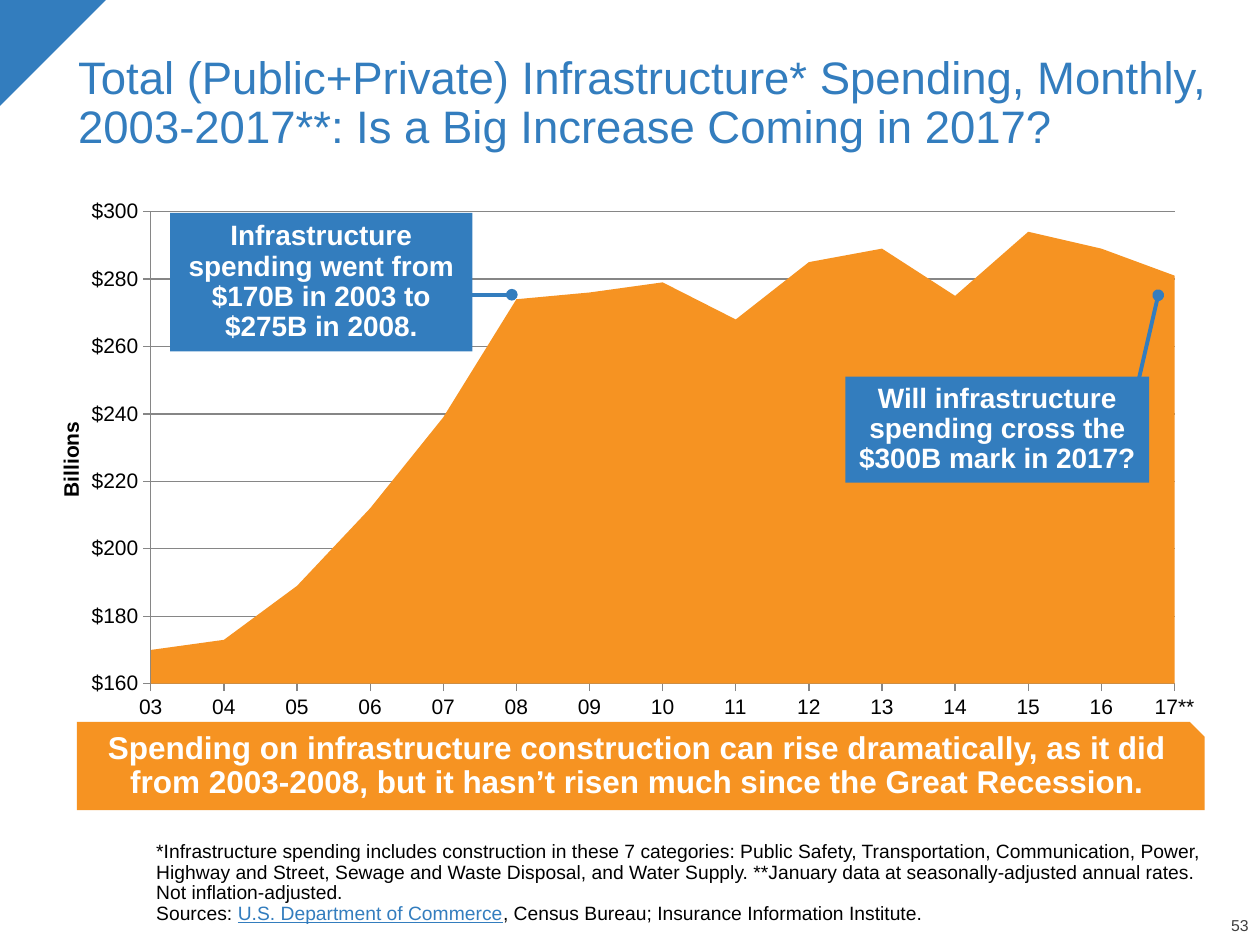
from collections import namedtuple

from lxml import etree
from pptx import Presentation
from pptx import util as u
from pptx.chart.data import CategoryChartData
from pptx.dml.color import RGBColor
from pptx.enum import chart as ch, shapes, text
from pptx.oxml import ns

COLORS = {"blue": "337DBE", "orange": "F69322", "white": "FFFFFF",
          "black": "000000", "gray": "404040", "grid": "868686"}
FONT = "Arial"
CELL = u.Inches(0.1)  # the slide is a grid of 100 columns by 75 rows
COLUMNS, ROWS = 100, 75
YEARS = [f"{year:02}" for year in range(3, 17)] + ["17**"]
SPENDING = [170, 173, 189, 212, 239, 274, 276, 279, 268, 285, 289, 275, 294, 289, 281]


class Box(namedtuple("Box", "left top width height")):
    """An area in grid cells."""

    def emu(self):
        return [round(cells * CELL) for cells in self]

    def point(self, across, down):
        """Position at the given shares of the box."""
        return (round((self.left + across * self.width) * CELL),
                round((self.top + down * self.height) * CELL))


def rgb(name):
    return RGBColor.from_string(COLORS[name])


def style_font(font, size, color="black", bold=False, underline=False):
    font.name, font.size = FONT, u.Pt(size)
    font.bold, font.underline = bold, underline
    font.color.rgb = rgb(color)


def write(frame, lines, size, color="black", bold=False, align=text.PP_ALIGN.LEFT,
          anchor=text.MSO_ANCHOR.MIDDLE, insets=(0.1, 0.05, 0.1, 0.05)):
    """Fill a frame; each line is a list of (words, extra font format)."""
    frame.word_wrap = True
    frame.auto_size = text.MSO_AUTO_SIZE.NONE
    frame.vertical_anchor = anchor
    (frame.margin_left, frame.margin_top,
     frame.margin_right, frame.margin_bottom) = map(u.Inches, insets)
    para = frame.paragraphs[0]
    para.alignment, para.line_spacing, para.space_before = align, 0.9, u.Pt(0)
    for index, line in enumerate(lines):
        if index:
            para.add_line_break()
        for words, extra in line:
            span = para.add_run()
            span.text = words
            style_font(span.font, size, **{"color": color, "bold": bold, **extra})


def add_block(parent, kind, box, color):
    block = parent.shapes.add_shape(kind, *box.emu())
    block.shadow.inherit = False
    block.fill.solid()
    block.fill.fore_color.rgb = rgb(color)
    block.line.fill.background()
    return block


def add_corner(page, box):
    corner = add_block(page, shapes.MSO_SHAPE.RIGHT_TRIANGLE, box, "blue")
    corner.rotation = 90


def add_title(page, box, words):
    title = page.shapes.title
    title.left, title.top, title.width, title.height = box.emu()
    write(title.text_frame, [[(words, {})]], 26, "blue", anchor=text.MSO_ANCHOR.BOTTOM)


def add_text(page, box, lines, size, **style):
    area = page.shapes.add_textbox(*box.emu())
    write(area.text_frame, lines, size, anchor=text.MSO_ANCHOR.BOTTOM,
          insets=(0, 0, 0, 0), **style)


def fix_plot_area(chart, **shares):
    """Pin the inner plot area to shares of the chart."""
    plot_area = chart.plots[0]._element.getparent()
    for old in plot_area.findall(ns.qn("c:layout")):
        plot_area.remove(old)
    layout = etree.Element(ns.qn("c:layout"))
    plot_area.insert(0, layout)
    manual = etree.SubElement(layout, ns.qn("c:manualLayout"))
    settings = {"layoutTarget": "inner", "xMode": "edge", "yMode": "edge", **shares}
    for tag, value in settings.items():
        etree.SubElement(manual, ns.qn(f"c:{tag}")).set("val", str(value))


def add_spending_chart(page, box):
    data = CategoryChartData()
    data.categories = YEARS
    data.add_series("Series 1", SPENDING)
    chart = page.shapes.add_chart(ch.XL_CHART_TYPE.AREA_STACKED, *box.emu(), data).chart
    chart.has_legend = chart.has_title = False
    style_font(chart.font, 18)
    fix_plot_area(chart, x=0.084, y=0.042, w=0.89, h=0.831)

    plot = chart.plots[0]
    plot.vary_by_categories = False
    fill = plot.series[0].format.fill
    fill.solid()
    fill.fore_color.rgb = rgb("orange")

    values, years = chart.value_axis, chart.category_axis
    for axis in (values, years):
        axis.major_tick_mark = ch.XL_TICK_MARK.OUTSIDE
        axis.minor_tick_mark = ch.XL_TICK_MARK.NONE
        axis.format.line.color.rgb = rgb("grid")
        style_font(axis.tick_labels.font, 12)
    years.has_major_gridlines = False
    values.minimum_scale, values.maximum_scale, values.major_unit = 160, 300, 20
    values.has_major_gridlines = True
    values.major_gridlines.format.line.color.rgb = rgb("grid")
    values.tick_labels.number_format = r"\$#,##0"
    values.tick_labels.number_format_is_linked = False
    # The area starts on the value axis itself
    values._element.find(ns.qn("c:crossBetween")).set("val", "midCat")

    frame = values.axis_title.text_frame
    frame.text = "Billions"
    style_font(frame.paragraphs[0].runs[0].font, 12, bold=True)
    frame._txBody.bodyPr.set("rot", "-5400000")
    frame._txBody.bodyPr.set("vert", "horz")


def add_callout(page, box, words, start, end):
    """Label with a dot-ended pointer; start and end are shares of the box."""
    group = page.shapes.add_group_shape()
    label = add_block(group, shapes.MSO_SHAPE.RECTANGLE, box, "blue")
    write(label.text_frame, [[(words, {})]], 16, "white", bold=True,
          align=text.PP_ALIGN.CENTER)
    pointer = group.shapes.add_connector(
        shapes.MSO_CONNECTOR.STRAIGHT, *box.point(*start), *box.point(*end))
    pointer.line.color.rgb = rgb("blue")
    pointer.line.width = u.Pt(2.25)
    etree.SubElement(pointer.line._get_or_add_ln(), ns.qn("a:tailEnd")).set("type", "oval")
    etree.SubElement(pointer._element.spPr, ns.qn("a:effectLst"))


def add_banner(page, box, words):
    banner = add_block(page, shapes.MSO_SHAPE.SNIP_1_RECTANGLE, box, "orange")
    write(banner.text_frame, [[(words, {})]], 18, "white", bold=True,
          align=text.PP_ALIGN.CENTER, insets=(0.1, 0.05, 0.1, 0.1))


def main():
    deck = Presentation()
    deck.slide_width, deck.slide_height = COLUMNS * CELL, ROWS * CELL
    page = deck.slides.add_slide(deck.slide_layouts[5])

    # Frame of the slide
    add_corner(page, Box(0, 0, 8.4, 8.4))
    add_text(page, Box(94.3, 72.9, 4.8, 1.3), [[("53", {})]], 9,
             color="gray", align=text.PP_ALIGN.RIGHT)
    add_title(page, Box(5.2, 2.3, 92.6, 10.4),
              "Total (Public+Private) Infrastructure* Spending, Monthly, "
              "2003-2017**: Is a Big Increase Coming in 2017?")

    # Footnote and sources
    add_text(page, Box(12.4, 67.1, 84, 6.3), [
        [("*Infrastructure spending includes construction in these 7 categories: "
          "Public Safety, Transportation, Communication, Power, Highway and Street, "
          "Sewage and Waste Disposal, and Water Supply. **January data at "
          "seasonally-adjusted annual rates. Not inflation-adjusted.", {})],
        [("Sources: ", {}),
         ("U.S. Department of Commerce", {"color": "blue", "underline": True}),
         (", Census Bureau; Insurance Information Institute.", {})]], 11)

    # Chart, message and callouts
    add_spending_chart(page, Box(4.3, 14.9, 91.3, 45.1))
    add_banner(page, Box(6.1, 57.3, 89.5, 7),
               "Spending on infrastructure construction can rise dramatically, as it did "
               "from 2003-2008, but it hasn’t risen much since the Great Recession.")
    add_callout(page, Box(13.5, 16.9, 24, 11),
                "Infrastructure spending went from $170B in 2003 to $275B in 2008.",
                start=(0.93, 0.59), end=(1.13, 0.59))
    add_callout(page, Box(67.1, 29.9, 24.1, 8.4),
                "Will infrastructure spending cross the $300B mark in 2017?",
                start=(0.96, 0.1), end=(1.03, -0.77))

    deck.save("out.pptx")


if __name__ == "__main__":
    main()
